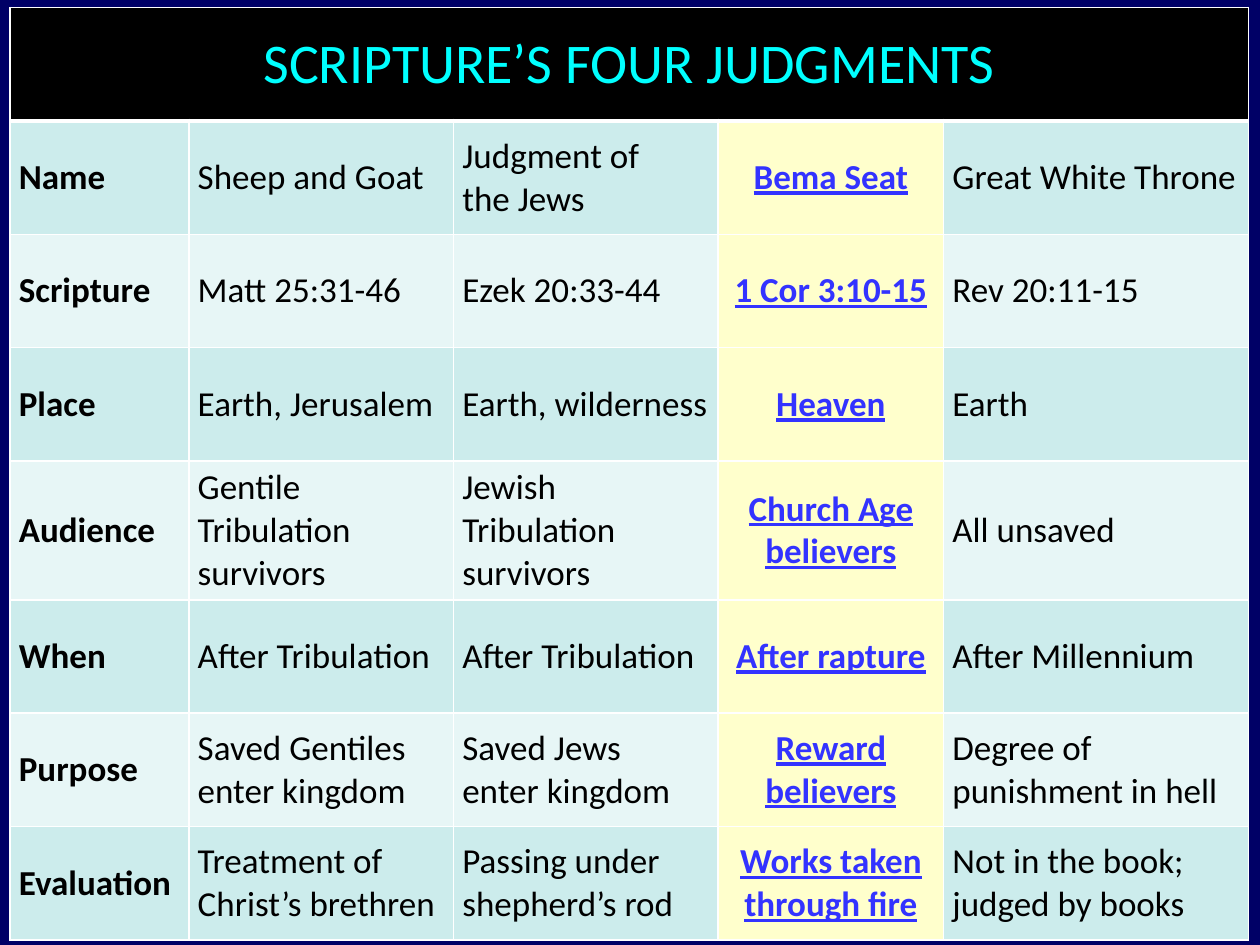
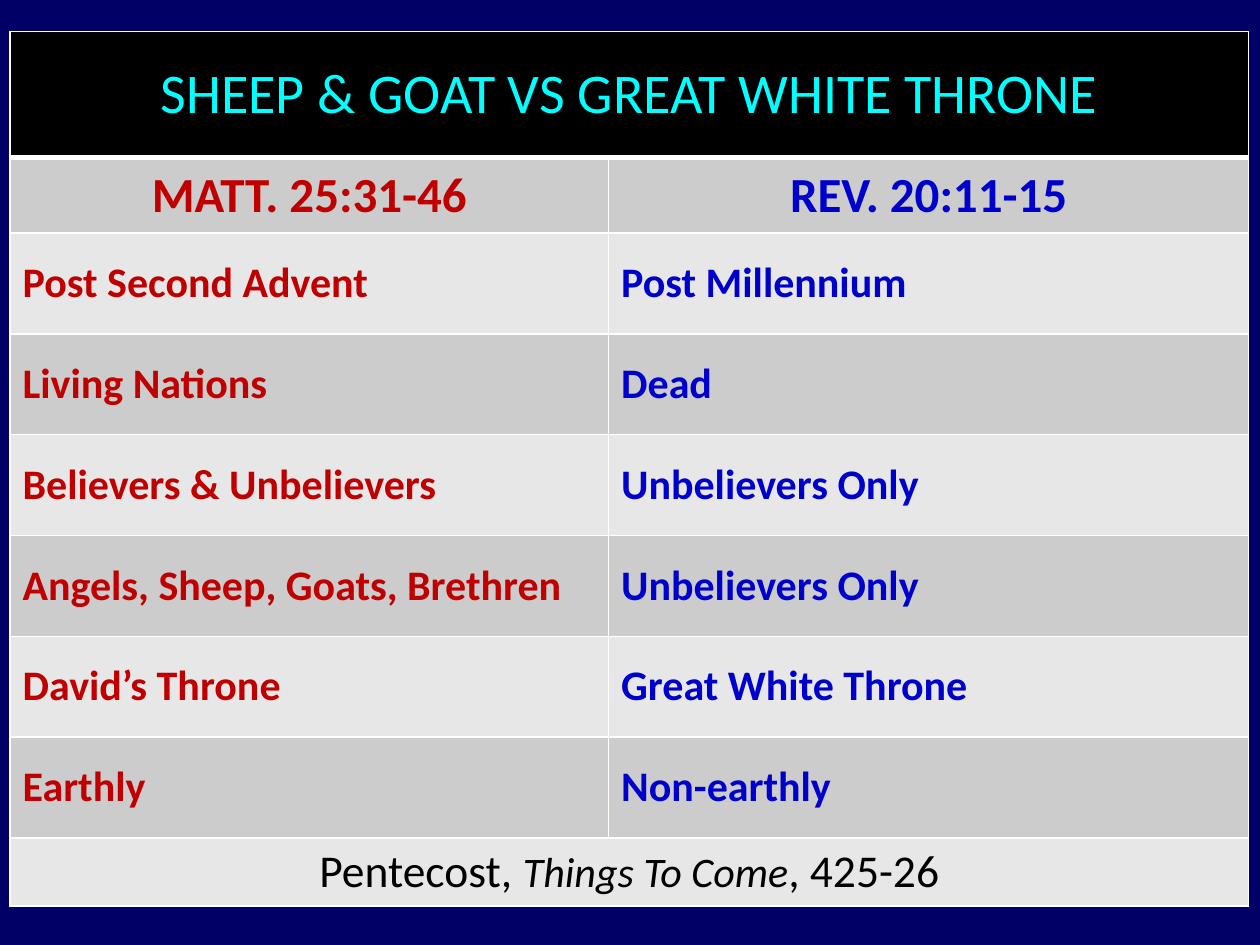
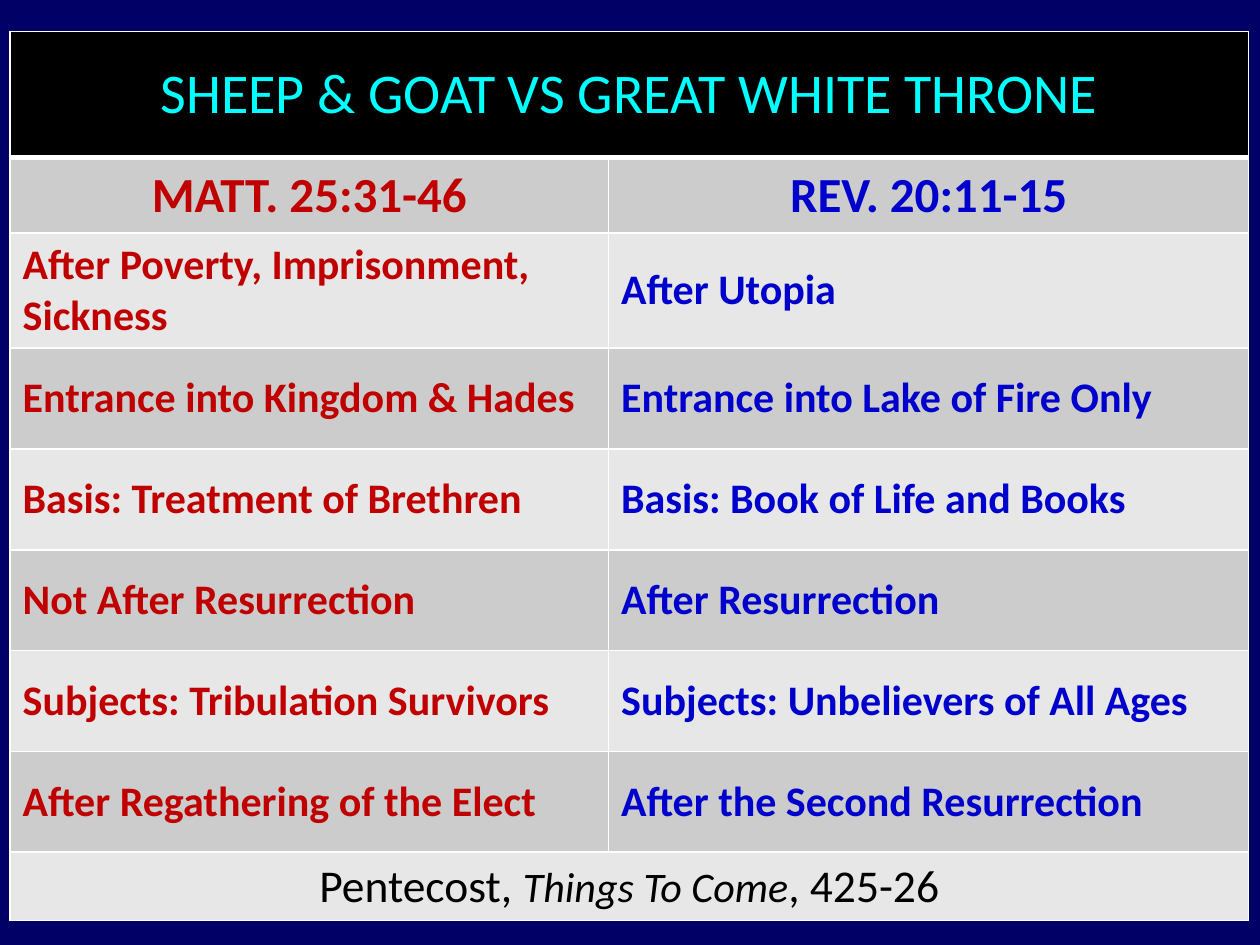
from dataclasses import dataclass

from lxml import etree
from pptx import Presentation
from pptx import util as u
from pptx.dml.color import RGBColor
from pptx.enum import text
from pptx.oxml import ns


@dataclass(frozen=True)
class Theme:
    font: str = "Calibri"
    background: str = "000066"
    title_fill: str = "000000"
    title_text: str = "00FFFF"
    border: str = "FFFFFF"
    body: str = "000000"
    highlight: str = "3333FF"
    highlight_fill: str = "FFFFCC"
    sheep: str = "C00000"
    throne: str = "0000CC"
    teal_bands: tuple = ("CCECEC", "E7F6F6")
    gray_bands: tuple = ("CCCCCC", "E7E7E7")
    title_size: int = 32
    heading_size: int = 28
    source_size: int = 26
    verdict_size: int = 24
    overview_size: int = 20
    thin: int = 1
    thick: int = 3


THEME = Theme()
TABLE_LEFT = 0.08

JUDGMENTS = [
    ["Name", "Sheep and Goat", "Judgment of\nthe Jews", "Bema Seat", "Great White Throne"],
    ["Scripture", "Matt 25:31-46", "Ezek 20:33-44", "1 Cor 3:10-15", "Rev 20:11-15"],
    ["Place", "Earth, Jerusalem", "Earth, wilderness", "Heaven", "Earth"],
    ["Audience", "Gentile Tribulation survivors", "Jewish Tribulation survivors",
     "Church Age believers", "All unsaved"],
    ["When", "After Tribulation", "After Tribulation", "After rapture", "After Millennium"],
    ["Purpose", "Saved Gentiles enter kingdom", "Saved Jews\nenter kingdom",
     "Reward believers", "Degree of punishment in hell"],
    ["Evaluation", "Treatment of Christ’s brethren", "Passing under shepherd’s rod",
     "Works taken through fire", "Not in the book; judged by books"],
]

SETTING_CONTRASTS = [
    ("Post Second Advent", "Post Millennium"),
    ("Living Nations", "Dead"),
    ("Believers & Unbelievers", "Unbelievers Only"),
    ("Angels, Sheep, Goats, Brethren", "Unbelievers Only"),
    ("David’s Throne", "Great White Throne"),
    ("Earthly", "Non-earthly"),
]

OUTCOME_CONTRASTS = [
    ("After Poverty, Imprisonment, Sickness", "After Utopia"),
    ("Entrance into Kingdom & Hades", "Entrance into Lake of Fire Only"),
    ("Basis: Treatment of Brethren", "Basis: Book of Life and Books"),
    ("Not After Resurrection", "After Resurrection"),
    ("Subjects: Tribulation Survivors", "Subjects: Unbelievers of All Ages"),
    ("After Regathering of the Elect", "After the Second Resurrection"),
]


class Deck:
    def __init__(self, theme):
        self.theme = theme
        self.presentation = Presentation()
        self.presentation.slide_width = u.Inches(10)
        self.presentation.slide_height = u.Inches(7.5)
        self.slide = None

    def add_slide(self):
        self.slide = self.presentation.slides.add_slide(self.presentation.slide_layouts[6])
        fill = self.slide.background.fill
        fill.solid()
        fill.fore_color.rgb = RGBColor.from_string(self.theme.background)

    def add_titled_table(self, title, top, widths, heights, bands, margins):
        """Add a banded grid whose first row is one merged title cell."""
        frame = self.slide.shapes.add_table(
            len(heights), len(widths), u.Inches(TABLE_LEFT), u.Inches(top),
            u.Inches(sum(widths)), u.Inches(sum(heights)))
        table = frame.table
        table.first_row = table.horz_banding = False
        for column, width in zip(table.columns, widths):
            column.width = u.Inches(width)
        for row, height in zip(table.rows, heights):
            row.height = u.Inches(height)
        for index, row in enumerate(table.rows):
            color = bands[(index - 1) % 2] if index else self.theme.title_fill
            for cell in row.cells:
                self.style_cell(cell, color, index, margins)
        self.merge_row(table, 0)
        self.add_cell_text(table.cell(0, 0), [(title, {})], self.theme.title_text,
                           self.theme.title_size, centered=True)
        return table

    def style_cell(self, cell, color, row_index, margins):
        side, edge = (u.Inches(margin) for margin in margins)
        layout = {"margin_left": side, "margin_right": side, "margin_top": edge,
                  "margin_bottom": edge, "vertical_anchor": text.MSO_ANCHOR.MIDDLE}
        for name, value in layout.items():
            setattr(cell, name, value)
        self.fill_cell(cell, color)
        widths = {"L": self.theme.thin, "R": self.theme.thin,
                  "T": self.theme.thick if row_index == 1 else self.theme.thin,
                  "B": self.theme.thick if row_index == 0 else self.theme.thin}
        properties = cell._tc.get_or_add_tcPr()
        for position, (border_side, width) in enumerate(widths.items()):
            line = etree.Element(ns.qn(f"a:ln{border_side}"), w=str(u.Pt(width)))
            solid = etree.SubElement(line, ns.qn("a:solidFill"))
            etree.SubElement(solid, ns.qn("a:srgbClr"), val=self.theme.border)
            properties.insert(position, line)

    def fill_cell(self, cell, color):
        cell.fill.solid()
        cell.fill.fore_color.rgb = RGBColor.from_string(color)

    def merge_row(self, table, row):
        table.cell(row, 0).merge(table.cell(row, len(table.columns) - 1))

    def add_cell_text(self, cell, runs, color, size, centered=False, **font_format):
        """Add (text, format) runs; a line break in a text starts a paragraph."""
        frame = cell.text_frame
        paragraph = frame.paragraphs[0]
        alignment = text.PP_ALIGN.CENTER if centered else text.PP_ALIGN.LEFT
        paragraph.alignment = alignment
        for content, run_format in runs:
            for index, line in enumerate(content.split("\n")):
                if index:
                    paragraph = frame.add_paragraph()
                    paragraph.alignment = alignment
                run = paragraph.add_run()
                run.text = line
                values = {"name": self.theme.font, "size": u.Pt(size), "bold": False,
                          **font_format, **run_format}
                for name, value in values.items():
                    setattr(run.font, name, value)
                run.font.color.rgb = RGBColor.from_string(color)

    def add_overview(self):
        theme = self.theme
        self.add_slide()
        table = self.add_titled_table(
            "SCRIPTURE’S FOUR JUDGMENTS", 0.06, [1.42, 2.1, 2.1, 1.79, 2.42],
            [0.9] * (len(JUDGMENTS) + 1), theme.teal_bands, (0.07, 0.04))
        label_column, bema_column = 0, 3
        for row, judgment in enumerate(JUDGMENTS, start=1):
            for column, content in enumerate(judgment):
                cell = table.cell(row, column)
                color, text_format = theme.body, {"bold": column == label_column}
                if column == bema_column:
                    self.fill_cell(cell, theme.highlight_fill)
                    color = theme.highlight
                    text_format = {"bold": True, "underline": True, "centered": True}
                self.add_cell_text(cell, [(content, {})], color, theme.overview_size,
                                   **text_format)

    def add_comparison(self, contrasts, first_height, source_height):
        theme = self.theme
        self.add_slide()
        heights = [1, 0.6, first_height, *[0.8] * (len(contrasts) - 1), source_height]
        table = self.add_titled_table(
            "SHEEP & GOAT VS GREAT WHITE THRONE", 0.25, [4.75, 5.08],
            heights, theme.gray_bands, (0.1, 0.05))
        rows = [("MATT. 25:31-46", "REV. 20:11-15"), *contrasts]
        for row, pair in enumerate(rows, start=1):
            is_heading = row == 1
            size = theme.heading_size if is_heading else theme.verdict_size
            for column, color in enumerate((theme.sheep, theme.throne)):
                self.add_cell_text(table.cell(row, column), [(pair[column], {})], color,
                                   size, centered=is_heading, bold=True)
        source_row = len(heights) - 1
        self.merge_row(table, source_row)
        book_format = {"italic": True, "size": u.Pt(theme.verdict_size)}
        citation = [("Pentecost, ", {}), ("Things To Come", book_format), (", 425-26", {})]
        self.add_cell_text(table.cell(source_row, 0), citation, theme.body,
                           theme.source_size, centered=True)


def main():
    deck = Deck(THEME)
    deck.add_overview()
    deck.add_comparison(SETTING_CONTRASTS, first_height=0.8, source_height=0.54)
    deck.add_comparison(OUTCOME_CONTRASTS, first_height=0.9, source_height=0.53)
    deck.presentation.save("out.pptx")


if __name__ == "__main__":
    main()
